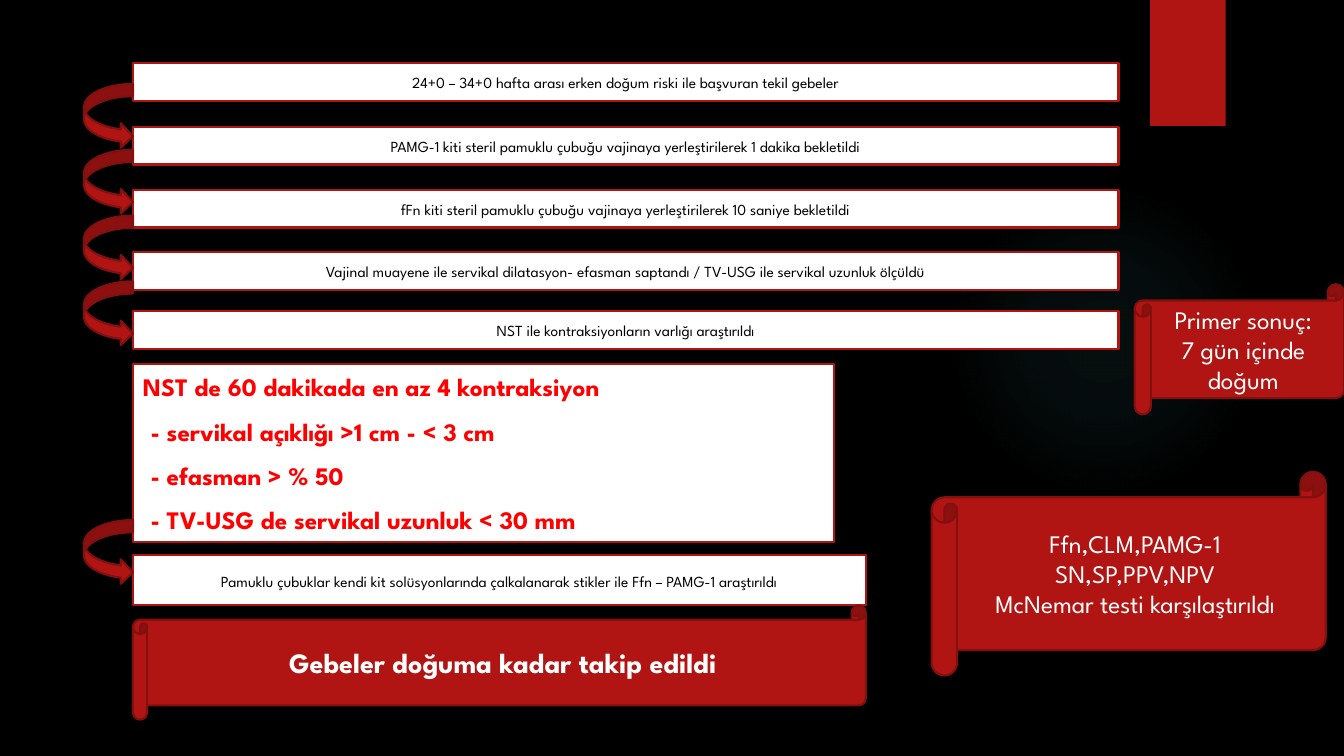
import pptx
import pptx.util
import pptx.dml.color
import pptx.enum.shapes
import pptx.enum.text
import pptx.oxml
import pptx.oxml.ns

Pt = pptx.util.Pt
SHAPE = pptx.enum.shapes.MSO_SHAPE
ALIGN = pptx.enum.text.PP_ALIGN
FONT = "League Spartan"
COLORS = {"black": "000000", "white": "FFFFFF", "crimson": "B01513",
          "maroon": "82100E", "red": "FF0000", "glow": "50B9C1"}


def add_box(kind, left, top, width, height, fill, line=None):
    box = page.shapes.add_shape(kind, Pt(left), Pt(top), Pt(width), Pt(height))
    box.shadow.inherit = False
    box.fill.solid()
    box.fill.fore_color.rgb = pptx.dml.color.RGBColor.from_string(COLORS[fill])
    if line:
        box.line.color.rgb = pptx.dml.color.RGBColor.from_string(COLORS[line])
        box.line.width = Pt(1.5)
    else:
        box.line.fill.background()
    return box


def write(box, lines, size, color, bold=False, align=ALIGN.CENTER, spacing=1.0, gap=0):
    frame = box.text_frame
    frame.word_wrap = True
    frame.vertical_anchor = pptx.enum.text.MSO_ANCHOR.MIDDLE
    for number, text in enumerate(lines):
        para = frame.paragraphs[0] if number == 0 else frame.add_paragraph()
        para.alignment = align
        para.line_spacing = spacing
        if number and gap:
            para.space_before = Pt(gap)
        span = para.add_run()
        span.text = text
        span.font.name = FONT
        span.font.size = Pt(size)
        span.font.bold = bold
        span.font.color.rgb = pptx.dml.color.RGBColor.from_string(COLORS[color])


deck = pptx.Presentation()
deck.slide_width, deck.slide_height = Pt(960), Pt(540)
page = deck.slides.add_slide(deck.slide_layouts[6])
page.background.fill.solid()
page.background.fill.fore_color.rgb = pptx.dml.color.RGBColor.from_string(COLORS["black"])

# Soft glow and corner tab
glow = add_box(SHAPE.OVAL, 677.5, 131.8, 221.8, 221.8, "glow")
stops = "".join(
    f'<a:gs pos="{place * 1000}"><a:srgbClr val="{COLORS["glow"]}">'
    f'<a:alpha val="{alpha * 1000}"/></a:srgbClr></a:gs>'
    for place, alpha in [(0, 7), (36, 6), (69, 0)])
gradient = pptx.oxml.parse_xml(
    f'<a:gradFill {pptx.oxml.ns.nsdecls("a")}><a:gsLst>{stops}</a:gsLst><a:path path="circle">'
    '<a:fillToRect l="50000" t="50000" r="50000" b="50000"/></a:path></a:gradFill>')
solid = glow.element.spPr.find(pptx.oxml.ns.qn("a:solidFill"))
solid.getparent().replace(solid, gradient)
add_box(SHAPE.RECTANGLE, 821.5, 0, 54, 90, "crimson")

# Study steps: top, width, height, text
steps = [
    (45, 704, 27, "24+0 – 34+0 hafta arası erken doğum riski ile başvuran tekil gebeler"),
    (90.5, 704, 27, "PAMG-1 kiti steril pamuklu çubuğu vajinaya yerleştirilerek 1 dakika bekletildi"),
    (135.5, 704, 27, "fFn kiti steril pamuklu çubuğu vajinaya yerleştirilerek 10 saniye bekletildi"),
    (180, 704, 27, "Vajinal muayene ile servikal dilatasyon- efasman saptandı / "
                   "TV-USG ile servikal uzunluk ölçüldü"),
    (222, 704, 27, "NST ile kontraksiyonların varlığı araştırıldı"),
    (396.5, 523.5, 36, "Pamuklu çubuklar kendi kit solüsyonlarında çalkalanarak "
                       "stikler ile Ffn – PAMG-1 araştırıldı"),
]
for top, width, height, text in steps:
    step = add_box(SHAPE.RECTANGLE, 95, top, width, height, "white", "crimson")
    write(step, [text], 11, "black", spacing=1.07)

# Inclusion criteria
criteria = add_box(SHAPE.RECTANGLE, 95, 260, 501, 127.5, "white", "crimson")
write(criteria, ["NST de 60 dakikada en az 4 kontraksiyon",
                 "- servikal açıklığı >1 cm - < 3 cm",
                 "- efasman > % 50",
                 "- TV-USG de servikal uzunluk < 30 mm"],
      18, "red", bold=True, align=ALIGN.LEFT, gap=10)
for para in criteria.text_frame.paragraphs[1:]:
    para._p.get_or_add_pPr().set("marL", str(Pt(5.5)))

# Curved arrows between steps
for top in [60 + 47 * number for number in range(4)] + [371.5]:
    add_box(SHAPE.CURVED_RIGHT_ARROW, 60, top, 35, 46, "crimson", "maroon")

# Scrolls: place, size, text
scrolls = [
    ((95, 432.5, 523.5, 81.5), 20, True, ["Gebeler doğuma kadar takip edildi"]),
    ((665.5, 337, 281.5, 145.5), 18, False,
     ["Ffn,CLM,PAMG-1", "SN,SP,PPV,NPV", "McNemar testi karşılaştırıldı"]),
    ((810.5, 203, 149.5, 93), 18, False, ["Primer sonuç:", "7 gün içinde doğum"]),
]
for place, size, bold, lines in scrolls:
    scroll = add_box(SHAPE.HORIZONTAL_SCROLL, *place, "crimson", "maroon")
    write(scroll, lines, size, "white", bold=bold)

deck.save("out.pptx")
